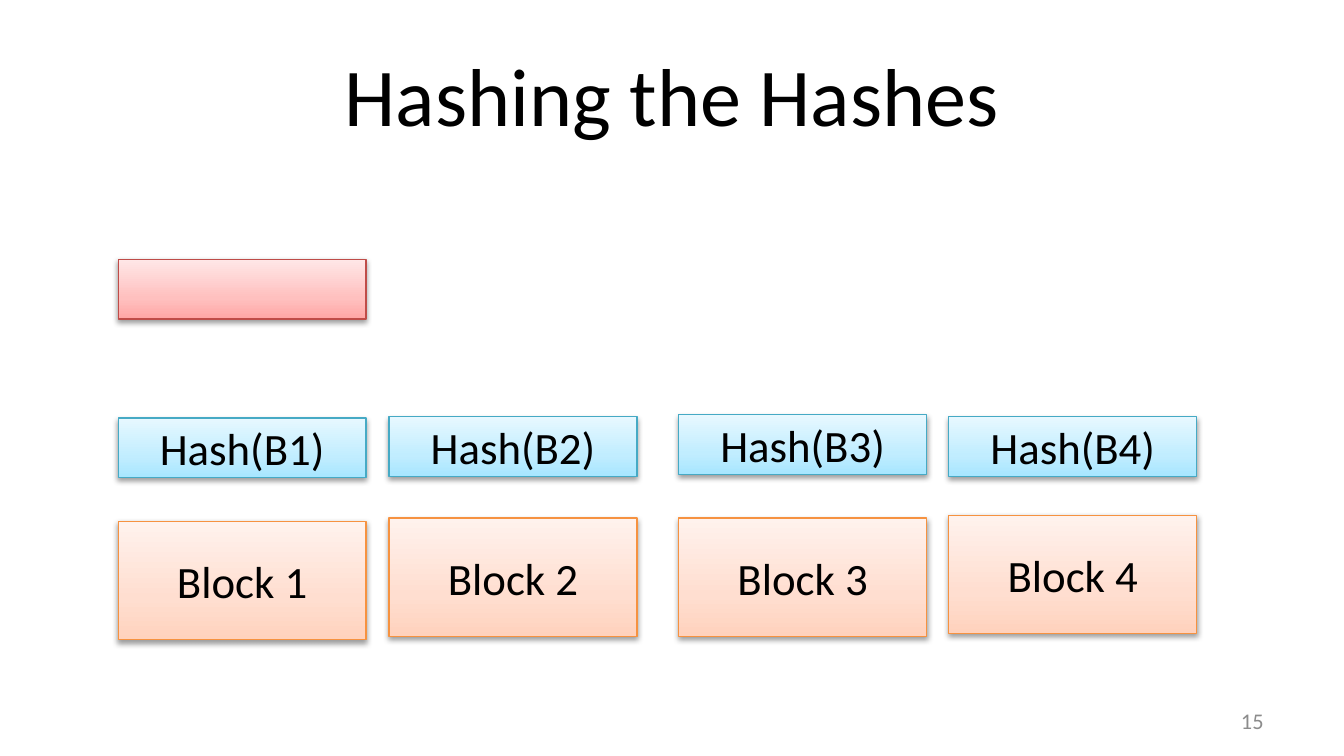
from typing import Any, NamedTuple

from lxml.etree import SubElement
from pptx import Presentation
from pptx.dml.color import RGBColor
from pptx.enum.shapes import MSO_SHAPE
from pptx.enum.text import MSO_ANCHOR, PP_ALIGN
from pptx.oxml.ns import qn
from pptx.util import Pt

SCALE = 4572
WIDE = 369
SHORT = 89
LEFTS = (176, 579, 1010, 1412)

COLORS = {
    "ink": "000000",
    "gray": "8C8C8C",
    "orange": "F69240",
    "teal": "46AAC5",
    "red": "BF4C48",
}
FADES = {
    "orange": ("FFD2BD", "FFDED0", "FFF2ED"),
    "teal": ("A7E6FF", "C1EDFF", "E7F8FF"),
    "red": ("FFA6A5", "FFC0BF", "FFE7E7"),
}
STOPS = (0, 35, 100)


class Area(NamedTuple):
    left: int
    top: int
    width: int
    height: int


class Row(NamedTuple):
    label: str
    tops: tuple[int, ...]
    height: int
    color: str


ROWS = (
    Row("Block {}", (776, 771, 771, 767), 176, "orange"),
    Row("Hash(B{})", (622, 620, 617, 620), SHORT, "teal"),
)


def place(area: Area) -> list[int]:
    return [side * SCALE for side in area]


def apply(target: Any, values: dict[str, Any]) -> None:
    for name, value in values.items():
        setattr(target, name, value)


def write(shape: Any, text: str, size: int, align: PP_ALIGN, color: str = "ink") -> None:
    frame = shape.text_frame
    apply(frame, {"word_wrap": True, "vertical_anchor": MSO_ANCHOR.MIDDLE})
    line = frame.paragraphs[0]
    line.alignment = align
    run = line.add_run()
    run.text = text
    apply(run.font, {"name": "Calibri", "size": Pt(size)})
    run.font.color.rgb = RGBColor.from_string(COLORS[color])


def shade(shape: Any, color: str) -> None:
    shape.fill.gradient()
    shape.fill.gradient_angle = 90
    props = shape.element.spPr
    stops = props.find(".//" + qn("a:gsLst"))
    stops.clear()
    for stop, tone in zip(STOPS, FADES[color]):
        mark = SubElement(stops, qn("a:gs"), pos=str(stop * 1000))
        SubElement(mark, qn("a:srgbClr"), val=tone)
    shape.line.color.rgb = RGBColor.from_string(COLORS[color])
    shape.line.width = Pt(0.75)
    shape.shadow.inherit = False
    glow = SubElement(
        props.find(qn("a:effectLst")),
        qn("a:outerShdw"),
        blurRad=str(Pt(3.1)),
        dist=str(Pt(1.6)),
        dir="5400000",
        rotWithShape="0",
    )
    tint = SubElement(glow, qn("a:srgbClr"), val=COLORS["ink"])
    SubElement(tint, qn("a:alpha"), val="38000")


def draw_box(slide: Any, area: Area, color: str, text: str = "") -> None:
    box = slide.shapes.add_shape(MSO_SHAPE.RECTANGLE, *place(area))
    shade(box, color)
    if text:
        write(box, text, 24, PP_ALIGN.CENTER)


def main() -> None:
    deck = Presentation()
    apply(deck, {"slide_width": 2000 * SCALE, "slide_height": 1125 * SCALE})
    slide = deck.slides.add_slide(deck.slide_layouts[5])

    title = slide.shapes.title
    sides = place(Area(100, 45, 1800, 188))
    apply(title, dict(zip(("left", "top", "width", "height"), sides)))
    write(title, "Hashing the Hashes", 44, PP_ALIGN.CENTER)

    page = slide.shapes.add_textbox(*place(Area(1433, 1043, 467, 60)))
    write(page, "15", 12, PP_ALIGN.RIGHT, "gray")

    for row in ROWS:
        for count, (left, top) in enumerate(zip(LEFTS, row.tops), 1):
            area = Area(left, top, WIDE, row.height)
            draw_box(slide, area, row.color, row.label.format(count))
    draw_box(slide, Area(LEFTS[0], 386, WIDE, SHORT), "red")

    deck.save("out.pptx")


if __name__ == "__main__":
    main()
